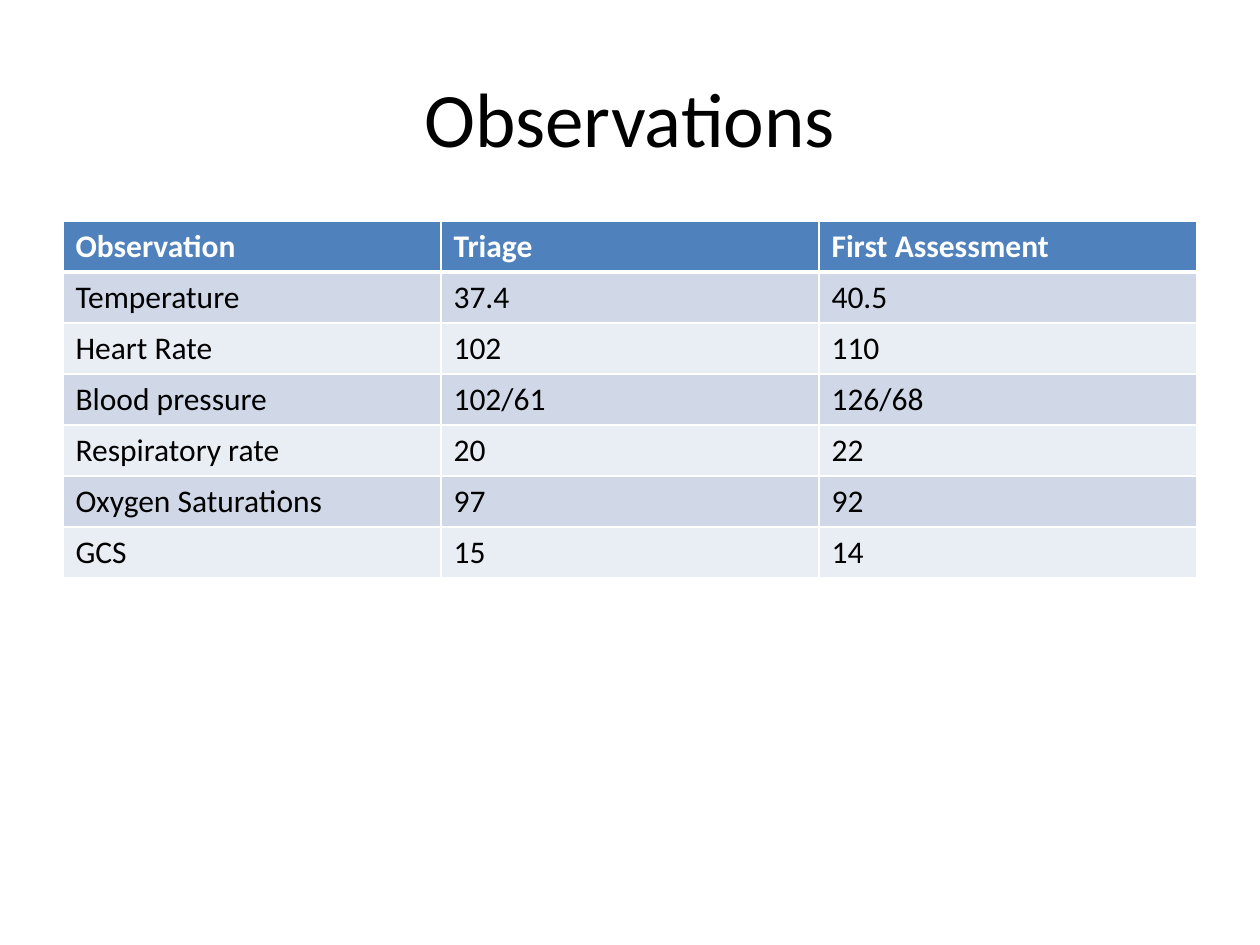
from dataclasses import dataclass

from lxml.etree import SubElement
from pptx import Presentation
from pptx.dml.color import RGBColor
from pptx.enum.text import MSO_ANCHOR as Anchor, PP_ALIGN as Align
from pptx.oxml.ns import qn
from pptx.util import Emu, Pt

PX_PER_INCH = 126
FONT = "Calibri"
BLACK = RGBColor(0x00, 0x00, 0x00)
WHITE = RGBColor(0xFF, 0xFF, 0xFF)
BLUE = RGBColor(0x4F, 0x81, 0xBD)
BAND_DARK = RGBColor(0xD0, 0xD8, 0xE8)
BAND_LIGHT = RGBColor(0xE9, 0xED, 0xF4)

LEFT, WIDTH = 63, 1134
TITLE_TOP, TITLE_HEIGHT = 38, 157
TABLE_TOP, ROW_HEIGHT = 221, 51
THIN, THICK = 1, 3


@dataclass(frozen=True)
class Row:
    observation: str
    triage: str
    first_assessment: str

    def texts(self) -> tuple[str, str, str]:
        return self.observation, self.triage, self.first_assessment


ROWS = [
    Row("Observation", "Triage", "First Assessment"),
    Row("Temperature", "37.4", "40.5"),
    Row("Heart Rate", "102", "110"),
    Row("Blood pressure", "102/61", "126/68"),
    Row("Respiratory rate", "20", "22"),
    Row("Oxygen Saturations", "97", "92"),
    Row("GCS", "15", "14"),
]


def px(n: int) -> Emu:
    return Emu(round(n * 914400 / PX_PER_INCH))


def write(tf, text: str, color: RGBColor, size: int, bold: bool = False) -> None:
    r = tf.paragraphs[0].add_run()
    r.text = text
    for name, value in {"name": FONT, "size": Pt(size), "bold": bold}.items():
        setattr(r.font, name, value)
    r.font.color.rgb = color


def set_borders(cell, top: int, bottom: int) -> None:
    """Draw white cell borders; call before the fill, which must follow them."""
    tc_pr = cell._tc.get_or_add_tcPr()
    for side, width in {"L": THIN, "R": THIN, "T": top, "B": bottom}.items():
        ln = SubElement(tc_pr, qn(f"a:ln{side}"), w=str(Pt(width)))
        fill = SubElement(ln, qn("a:solidFill"))
        SubElement(fill, qn("a:srgbClr"), val=str(WHITE))


def add_title(s, text: str) -> None:
    sp = s.shapes.add_textbox(px(LEFT), px(TITLE_TOP), px(WIDTH), px(TITLE_HEIGHT))
    tf = sp.text_frame
    for name, value in {"word_wrap": True, "vertical_anchor": Anchor.MIDDLE}.items():
        setattr(tf, name, value)
    tf.paragraphs[0].alignment = Align.CENTER
    write(tf, text, BLACK, 44)


def add_observations(s, rows: list[Row]) -> None:
    n_cols = len(rows[0].texts())
    table = s.shapes.add_table(len(rows), n_cols, px(LEFT), px(TABLE_TOP),
                               px(WIDTH), px(ROW_HEIGHT * len(rows))).table
    for i, row in enumerate(rows):
        header = i == 0
        band = BLUE if header else BAND_DARK if i % 2 else BAND_LIGHT
        for j, text in enumerate(row.texts()):
            cell = table.cell(i, j)
            # The thick rule lies between the header and the first data row
            set_borders(cell, THICK if i == 1 else THIN, THICK if header else THIN)
            cell.fill.solid()
            cell.fill.fore_color.rgb = band
            write(cell.text_frame, text, WHITE if header else BLACK, 18, header)


def main() -> None:
    prs = Presentation()
    prs.slide_width, prs.slide_height = px(1260), px(945)
    s = prs.slides.add_slide(prs.slide_layouts[6])
    add_title(s, "Observations")
    add_observations(s, ROWS)
    prs.save("out.pptx")


if __name__ == "__main__":
    main()
